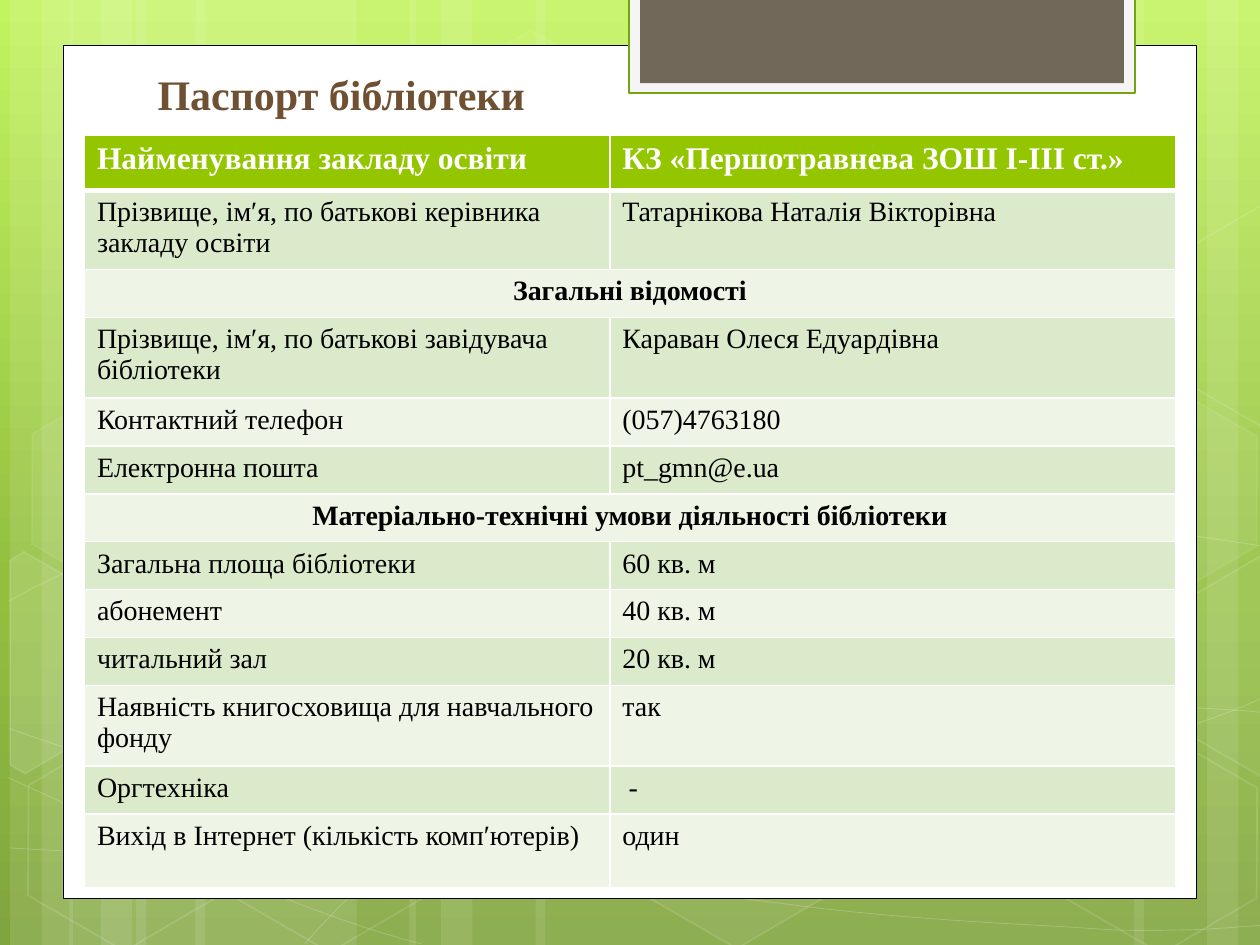
from lxml import etree
from copy import deepcopy
from pptx import Presentation
from pptx.dml.color import RGBColor
from pptx.enum.shapes import MSO_SHAPE
from pptx.enum.text import MSO_ANCHOR, PP_ALIGN
from pptx.oxml.ns import qn
from pptx.util import Inches, Pt

FONT = "Times New Roman"
COLORS = {
    "white": "FFFFFF", "black": "000000", "title": "705032",
    "sky": "C3F35F", "leaf": "93BF3F", "moss": "81A53E",
    "tab": "F5F5F5", "tab_edge": "74A510", "tab_core": "71685A",
    "header": "94C600", "band_dark": "DCEACC", "band_light": "EEF5E7",
}

# Left, width of the translucent vertical bands
BANDS = [(1.08, 1.75), (0.08, 0.5), (0.33, 0.83), (1.55, 1.75), (0.55, 0.5),
         (0.8, 0.83), (7.33, 1.75), (9.58, 0.5), (9, 0.83), (4.25, 3.08),
         (3.25, 0.5), (3.5, 0.83)]

# Start point, then Bezier control points in threes
CURVES = [
    [(0.07, 6.73), (0.61, 6.76), (1.15, 6.79), (1.9, 6.78), (2.65, 6.77),
     (3.58, 6.75), (4.58, 6.65), (5.58, 6.55), (7, 6.36), (7.92, 6.17),
     (8.83, 5.98), (9.77, 5.68), (10.07, 5.51)],
    [(0.07, 4.77), (0.36, 4.61), (0.65, 4.46), (1.21, 4.31), (1.78, 4.16),
     (2.59, 3.94), (3.47, 3.87), (4.36, 3.8), (5.44, 3.79), (6.54, 3.87),
     (7.64, 3.95), (9.47, 4.26), (10.07, 4.34)],
    [(0.06, 6.17), (1.27, 6.72), (2.47, 7.27), (3.34, 7.49)],
    [(0.07, 5.78), (0.38, 5.89), (0.7, 6), (1.28, 6.16), (1.86, 6.31),
     (2.73, 6.56), (3.57, 6.73), (4.4, 6.9), (5.45, 7.08), (6.28, 7.18),
     (7.11, 7.29), (8, 7.33), (8.53, 7.36), (9.05, 7.4), (9.19, 7.38),
     (9.45, 7.38), (9.71, 7.37), (9.89, 7.35), (10.07, 7.34)],
    [(2.42, 7.49), (2.6, 7.29), (2.78, 7.09), (3.02, 6.91), (3.26, 6.73),
     (3.6, 6.53), (3.88, 6.39), (4.16, 6.25), (4.33, 6.19), (4.7, 6.09),
     (5.06, 5.99), (5.73, 5.85), (6.08, 5.78), (6.44, 5.71), (6.49, 5.71),
     (6.8, 5.69), (7.11, 5.66), (7.6, 5.63), (7.94, 5.62), (8.29, 5.61),
     (8.86, 5.62), (8.86, 5.62), (8.86, 5.62), (9.53, 5.62), (9.53, 5.62),
     (9.71, 5.63), (9.88, 5.64), (9.97, 5.65), (10.06, 5.66), (10.03, 5.65),
     (10.06, 5.66)],
]

# Left, top, fill opacity (None: no fill), line opacity
HEXAGONS = [(3.34, 0.36, 4, 8), (4.97, 5.89, 6, 12), (0.11, 5.91, None, 12),
            (0.14, 3.12, 7, 8), (1.74, 5.92, None, 12),
            (8.34, 5.93, None, 12), (8.34, 3.14, 7, 8)]

# Hexagons cut by the slide edge: points, fill opacity
CUT_HEXAGONS = [
    ([(0.08, 4.45), (0.19, 4.38), (0.96, 4.82), (0.95, 5.7), (0.2, 6.14),
      (0.08, 6.07)], 10),
    ([(9.26, 4.85), (10.01, 4.41), (10.09, 4.46), (10.09, 6.13),
      (10.02, 6.17), (9.26, 5.73)], 4),
    ([(9.26, 2.07), (10.01, 1.63), (10.1, 1.68), (10.09, 3.35),
      (10.02, 3.39), (9.26, 2.95)], None),
]

# Rows with one text are section headings across both columns
PASSPORT = [
    (0.44, "Найменування закладу освіти", "КЗ «Першотравнева ЗОШ І-ІІІ ст.»"),
    (0.63, "Прізвище, ім′я, по батькові керівника закладу освіти",
     "Татарнікова Наталія Вікторівна"),
    (0.38, "Загальні відомості"),
    (0.64, "Прізвище, ім′я, по батькові завідувача бібліотеки",
     "Караван Олеся Едуардівна"),
    (0.38, "Контактний телефон", "(057)4763180"),
    (0.38, "Електронна пошта", "pt_gmn@e.ua"),
    (0.38, "Матеріально-технічні умови діяльності бібліотеки"),
    (0.38, "Загальна площа бібліотеки", "60 кв. м"),
    (0.38, "абонемент", "40 кв. м"),
    (0.38, "читальний зал", "20 кв. м"),
    (0.64, "Наявність книгосховища для навчального фонду", "так"),
    (0.38, "Оргтехніка", "-"),
    (0.59, "Вихід в Інтернет (кількість комп′ютерів)", "один"),
]


def rgb(name):
    return RGBColor.from_string(COLORS[name])


def paint(fill, color, opacity=100):
    if opacity is None:
        fill.background()
        return
    fill.solid()
    fill.fore_color.rgb = rgb(color)


def style(shape, fill="white", opacity=100, line=None, width=1, line_opacity=100):
    shape.shadow.inherit = False
    paint(shape.fill, fill, opacity)
    if line:
        paint(shape.line.fill, line)
        shape.line.width = Pt(width)
    else:
        shape.line.fill.background()
    # Opacity of the fill, then of the line
    properties = shape.element.spPr
    for holder, percent in ((properties, opacity), (properties.find(qn("a:ln")), line_opacity)):
        color = holder.find(qn("a:solidFill") + "/" + qn("a:srgbClr"))
        if color is not None and percent < 100:
            etree.SubElement(color, qn("a:alpha"), val=str(percent * 1000))


def add_box(slide, box, preset=MSO_SHAPE.RECTANGLE, **look):
    shape = slide.shapes.add_shape(preset, *map(Inches, box))
    style(shape, **look)
    return shape


def add_outline(slide, points, close, **look):
    emu = [(Inches(x), Inches(y)) for x, y in points]
    builder = slide.shapes.build_freeform(*emu[0])
    builder.add_line_segments(emu[1:], close=close)
    outline = builder.convert_to_shape()
    style(outline, **look)
    return outline


def bend(outline):
    """Turn each three line segments into one cubic Bezier segment."""
    segments = list(outline.element.iter(qn("a:lnTo")))
    for first in range(0, len(segments), 3):
        curve = etree.Element(qn("a:cubicBezTo"))
        segments[first].addprevious(curve)
        for segment in segments[first:first + 3]:
            curve.append(segment[0])
            segment.getparent().remove(segment)


def add_backdrop(slide, height):
    fill = slide.background.fill
    fill.gradient()
    fill.gradient_angle = 270
    stop_list = next(slide.element.iter(qn("a:gsLst")))
    stop_list.append(deepcopy(stop_list[-1]))
    for stop, (place, color) in zip(fill.gradient_stops,
                                    ((0, "sky"), (0.62, "leaf"), (1, "moss"))):
        stop.position = place
        stop.color.rgb = rgb(color)

    for left, width in BANDS:
        add_box(slide, (left, 0, width, height), opacity=10)
    for controls in CURVES:
        bend(add_outline(slide, controls, False, opacity=None,
                         line="white", width=0.5, line_opacity=20))
    for left, top, opacity, edge in HEXAGONS:
        hexagon = add_box(slide, (left, top, 1.75, 1.52), MSO_SHAPE.HEXAGON,
                          opacity=opacity, line="white", line_opacity=edge)
        hexagon.adjustments[0] = 0.285
        hexagon.rotation = 30
    for points, opacity in CUT_HEXAGONS:
        add_outline(slide, points, True, opacity=opacity, line="white", line_opacity=12)


def add_panel(slide, left, top, width, height):
    add_box(slide, (left, top, width, height), line="black", width=0.5)
    # Tab hanging from the top edge
    add_box(slide, (left + 4.49, -0.02, 4.02, 0.76), fill="tab", line="tab_edge", width=1.25)
    add_box(slide, (left + 4.58, -0.02, 3.84, 0.68), fill="tab_core")


def add_text(frame, text, size, color, bold, align=PP_ALIGN.LEFT):
    paragraph = frame.paragraphs[0]
    paragraph.alignment = align
    run = paragraph.add_run()
    run.text = text
    run.font.name, run.font.size, run.font.bold = FONT, Pt(size), bold
    run.font.color.rgb = rgb(color)


def add_title(slide, left, top, width, height):
    title = slide.shapes.title
    title.left, title.top, title.width, title.height = map(Inches, (left, top, width, height))
    # In front of the panel
    title.element.getparent().append(title.element)
    frame = title.text_frame
    frame.vertical_anchor = MSO_ANCHOR.TOP
    frame.margin_left, frame.margin_top = Inches(0.34), Inches(0.54)
    add_text(frame, "Паспорт бібліотеки", 24, "title", True)


def set_borders(cell, bottom):
    properties = cell._tc.get_or_add_tcPr()
    for side, points in (("L", 1), ("R", 1), ("T", 1), ("B", bottom)):
        line = etree.SubElement(properties, qn("a:ln" + side), w=str(Pt(points)))
        solid = etree.SubElement(line, qn("a:solidFill"))
        etree.SubElement(solid, qn("a:srgbClr"), val=COLORS["white"])


def add_passport(slide, left, top, columns):
    heights = [row[0] for row in PASSPORT]
    box = map(Inches, (left, top, sum(columns), sum(heights)))
    table = slide.shapes.add_table(len(PASSPORT), len(columns), *box).table
    for column, width in zip(table.columns, columns):
        column.width = Inches(width)
    for index, (height, *texts) in enumerate(PASSPORT):
        table.rows[index].height = Inches(height)
        header, section = index == 0, len(texts) == 1
        band = "header" if header else "band_dark" if index % 2 else "band_light"
        for cell in table.rows[index].cells:
            set_borders(cell, 3 if header else 1)
            paint(cell.fill, band)
        if section:
            table.cell(index, 0).merge(table.cell(index, 1))
        for column, text in enumerate(texts):
            cell = table.cell(index, column)
            if text == "-":
                cell.margin_left = Inches(0.15)
            add_text(cell.text_frame, text, 18 if header else 16,
                     "white" if header else "black", header or section,
                     PP_ALIGN.CENTER if section else PP_ALIGN.LEFT)


def main():
    deck = Presentation()
    deck.slide_width, deck.slide_height = Inches(10), Inches(7.5)
    slide = deck.slides.add_slide(deck.slide_layouts[5])
    add_backdrop(slide, 7.5)
    add_panel(slide, 0.5, 0.36, 9, 6.77)
    add_title(slide, 0.91, 0, 8.03, 1.57)
    add_passport(slide, 0.67, 1.07, (4.17, 4.49))
    deck.save("out.pptx")


if __name__ == "__main__":
    main()
